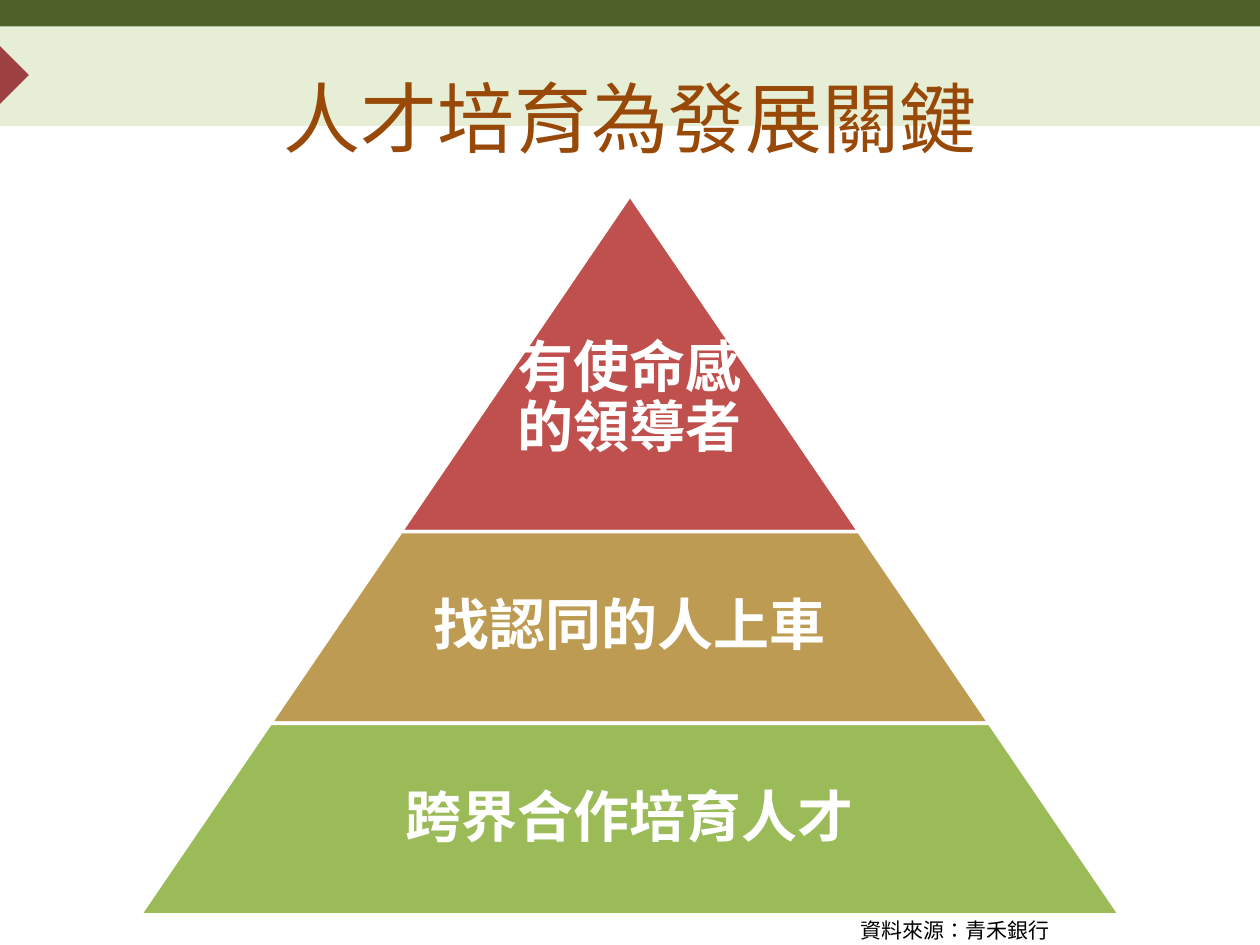
from pptx import Presentation
from pptx import util as u
from pptx.dml.color import RGBColor
from pptx.enum import lang, shapes, text
from lxml import etree

# Content
TITLE = "人才培育為發展關鍵"
SOURCE = "資料來源：青禾銀行"
# label, height, fill, text share of width, extra top inset
TIERS = [
    ("有使命感\v的領導者", 2.67, "C0504D", 1, 0.57),
    ("找認同的人上車", 1.52, "BD9B53", 0.65, 0),
    ("跨界合作培育人才", 1.52, "9BBB59", 0.65, 0),
]
# left, top, width, height, fill, rotation
BANDS = [
    (0, 0.21, 10, 0.79, "E6EFD5", 0),
    (0, 0, 10, 0.21, "4F6228", 0),
    (-0.41, 0.33, 0.53, 0.53, "9C4042", 315),
]
THEME = dict(body="Calibri", cjk="Noto Sans CJK SC", title="984807",
             white="FFFFFF", black="000000", big=44, label=32, small=12)
MID, APEX, SLOPE, PAD = 5, 1.55, 0.681, 0.04

prs = Presentation()
prs.slide_width, prs.slide_height = u.Inches(10), u.Inches(7.5)
slide = prs.slides.add_slide(prs.slide_layouts[6])


def rgb(code):
    return RGBColor.from_string(code)


def add_shape(kind, box, fill):
    shape = slide.shapes.add_shape(kind, *map(u.Inches, box))
    shape.shadow.inherit = False
    shape.fill.solid()
    shape.fill.fore_color.rgb = rgb(fill)
    shape.line.fill.background()
    return shape


def add_text(words, box, size, color, face, bold=False, wrap=True):
    frame = slide.shapes.add_textbox(*map(u.Inches, box)).text_frame
    frame.word_wrap = wrap
    frame.text = words
    for run in frame.paragraphs[0].runs:
        font = run.font
        font.name, font.size, font.bold = face, u.Pt(size), bold
        font.color.rgb = rgb(color)
        font.language_id = lang.MSO_LANGUAGE_ID.TRADITIONAL_CHINESE
        if face == THEME["cjk"]:
            latin = font._element.find("{*}latin")
            east = etree.Element(latin.tag.replace("latin", "ea"), typeface=face)
            latin.addnext(east)
    return frame


def center(frame):
    frame.vertical_anchor = text.MSO_ANCHOR.MIDDLE
    frame.paragraphs[0].alignment = text.PP_ALIGN.CENTER


# Header bands and marker
for *box, fill, turn in BANDS:
    add_shape(shapes.MSO_SHAPE.RECTANGLE, box, fill).rotation = turn

# Title
center(add_text(TITLE, (0.5, 0.3, 9, 1.25), THEME["big"], THEME["title"],
                THEME["body"]))

# Pyramid: each tier widens along one common slope
depth = 0
for label, high, fill, share, drop in TIERS:
    top = APEX + depth
    depth += high
    wide = 2 * SLOPE * depth
    tier = add_shape(shapes.MSO_SHAPE.TRAPEZOID,
                     (MID - wide / 2, top, wide, high), fill)
    tier.adjustments[0] = SLOPE
    tier.line.color.rgb = rgb(THEME["white"])
    tier.line.width = u.Pt(2)

    span = wide * share
    frame = add_text(label, (MID - span / 2, top, span, high), THEME["label"],
                     THEME["white"], THEME["cjk"], bold=True)
    center(frame)
    frame.paragraphs[0].line_spacing = 0.9
    frame.margin_left = frame.margin_right = frame.margin_bottom = u.Inches(PAD)
    frame.margin_top = u.Inches(PAD + drop)

# Source line
add_text(SOURCE, (6.73, 7.23, 1.72, 0.3), THEME["small"], THEME["black"],
         THEME["body"], wrap=False)

prs.save("out.pptx")
